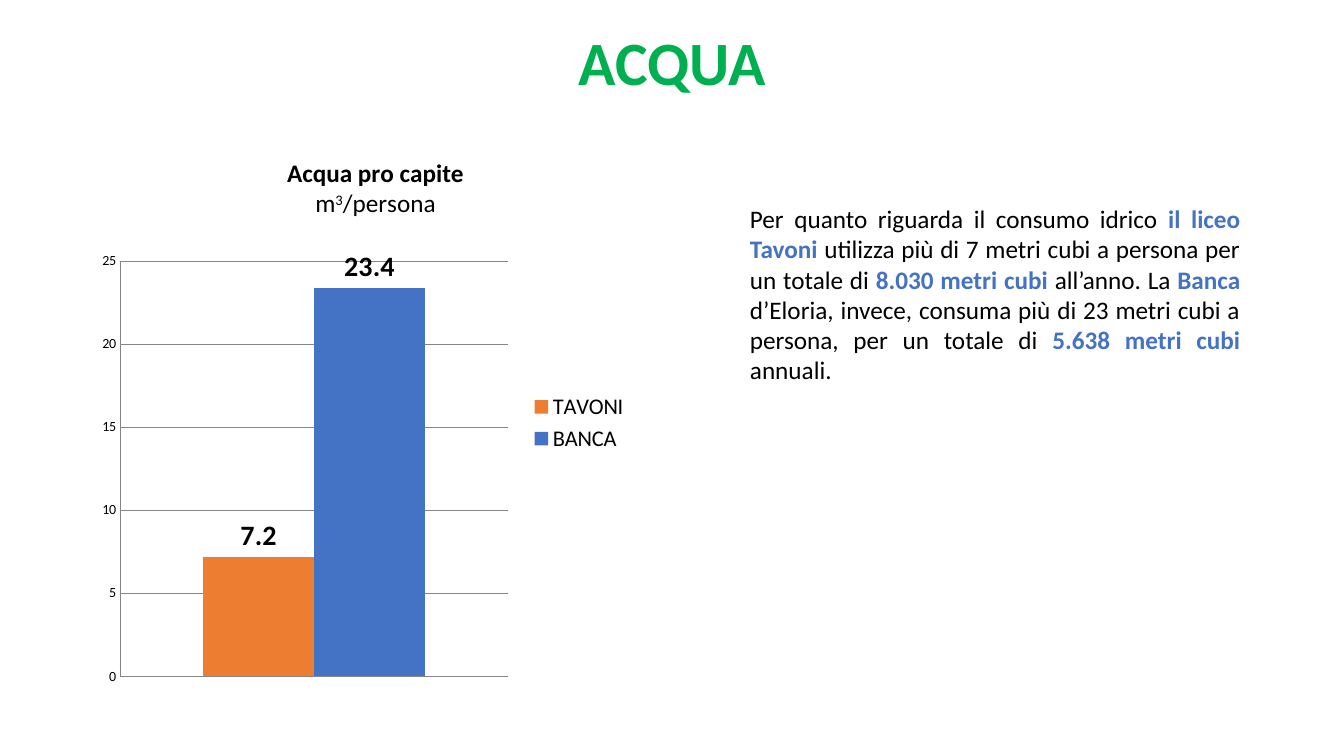
from lxml import etree
from pptx import Presentation
from pptx.chart.data import CategoryChartData
from pptx.dml.color import RGBColor
from pptx.enum.chart import XL_CHART_TYPE as ChartType
from pptx.enum.chart import XL_LABEL_POSITION as LabelPosition
from pptx.enum.chart import XL_LEGEND_POSITION as LegendPosition
from pptx.enum.chart import XL_TICK_MARK as TickMark
from pptx.enum.text import MSO_ANCHOR as Anchor
from pptx.enum.text import PP_ALIGN as Align
from pptx.oxml.ns import qn
from pptx.util import Inches, Pt

GREEN = RGBColor(0x00, 0xB0, 0x50)
BLUE = RGBColor(0x44, 0x72, 0xC4)
ORANGE = RGBColor(0xED, 0x7D, 0x31)
BLACK = RGBColor(0x00, 0x00, 0x00)
GRAY = RGBColor(0x86, 0x86, 0x86)
FONT = "Calibri"


def add_span(para, text, size=18, color=BLACK, bold=False):
    span = para.add_run()
    span.text = text
    span.font.name = FONT
    span.font.size = Pt(size)
    span.font.color.rgb = color
    span.font.bold = bold
    return span


def place(parent, index, **fractions):
    """Give a chart part a manual layout, in fractions of the chart area."""
    for old in parent.findall(qn("c:layout")):
        parent.remove(old)
    layout = etree.Element(qn("c:layout"))
    manual = etree.SubElement(layout, qn("c:manualLayout"))
    for tag, value in fractions.items():
        etree.SubElement(manual, qn(f"c:{tag}")).set("val", str(value))
    parent.insert(index, layout)


deck = Presentation()
deck.slide_width, deck.slide_height = Inches(13.33), Inches(7.5)
page = deck.slides.add_slide(deck.slide_layouts[6])

# Heading
heading = page.shapes.add_textbox(Inches(0.92), Inches(0), Inches(11.5), Inches(1.29))
heading.text_frame.word_wrap = True
heading.text_frame.vertical_anchor = Anchor.MIDDLE
para = heading.text_frame.paragraphs[0]
para.alignment = Align.CENTER
para.line_spacing = 0.9
add_span(para, "ACQUA", size=44, color=GREEN, bold=True)

# Commentary, with the key words highlighted
commentary = page.shapes.add_textbox(Inches(7.34), Inches(1.97), Inches(5.06), Inches(1.92))
commentary.text_frame.word_wrap = True
para = commentary.text_frame.paragraphs[0]
para.alignment = Align.JUSTIFY
phrases = [
    ("Per quanto riguarda il consumo idrico ", False),
    ("il liceo Tavoni ", True),
    ("utilizza più di 7 metri cubi a persona per un totale di ", False),
    ("8.030 metri cubi", True),
    (" all’anno. La", False),
    (" Banca ", True),
    ("d’Eloria, invece, consuma più di 23 metri cubi a persona, per un totale di ", False),
    ("5.638 metri cubi ", True),
    ("annuali. ", False),
]
for text, key in phrases:
    add_span(para, text, color=BLUE if key else BLACK, bold=key)

# Water use per person
consumers = [("TAVONI", 7.2, ORANGE), ("BANCA", 23.4, BLUE)]
data = CategoryChartData()
data.categories = ["1"]
for name, value, _ in consumers:
    data.add_series(name, [value])
chart = page.shapes.add_chart(
    ChartType.COLUMN_CLUSTERED, Inches(0.92), Inches(1.52), Inches(5.42), Inches(5.35), data
).chart
chart.font.name = FONT
chart.font.size = Pt(10)
chart.font.color.rgb = BLACK

chart.has_title = True
title = chart.chart_title
title.include_in_layout = False
para = title.text_frame.paragraphs[0]
add_span(para, "Acqua pro capite", bold=True)
para = title.text_frame.add_paragraph()
add_span(para, "m")
add_span(para, "3").font._element.set("baseline", "30000")
add_span(para, "/persona")
place(title._element, 1, xMode="edge", yMode="edge", x=0.35, y=0)

chart.has_legend = True
chart.legend.position = LegendPosition.RIGHT
chart.legend.include_in_layout = False
chart.legend.font.name = FONT
chart.legend.font.size = Pt(16)
chart.legend.font.color.rgb = BLACK

chart.category_axis.visible = False
axis = chart.value_axis
axis.minimum_scale, axis.maximum_scale, axis.major_unit = 0, 25, 5
axis.major_tick_mark = axis.minor_tick_mark = TickMark.NONE
axis.tick_labels.number_format = "0"
axis.tick_labels.number_format_is_linked = False
for line in (axis.format.line, axis.major_gridlines.format.line):
    line.color.rgb = GRAY
    line.width = Pt(0.75)

plot = chart.plots[0]
plot.gap_width = 150
plot.vary_by_categories = False
for series, (_, _, color) in zip(plot.series, consumers):
    series.format.fill.solid()
    series.format.fill.fore_color.rgb = color
    labels = series.data_labels
    labels.show_value = True
    labels.number_format = "0.0"
    labels.number_format_is_linked = False
    labels.position = LabelPosition.OUTSIDE_END
    labels.font.name = FONT
    labels.font.size = Pt(20)
    labels.font.bold = True
    labels.font.color.rgb = BLACK
place(
    plot._element.getparent(), 0,
    layoutTarget="inner", xMode="edge", yMode="edge", x=0.05, y=0.2, w=0.71, h=0.77,
)

deck.save("out.pptx")
